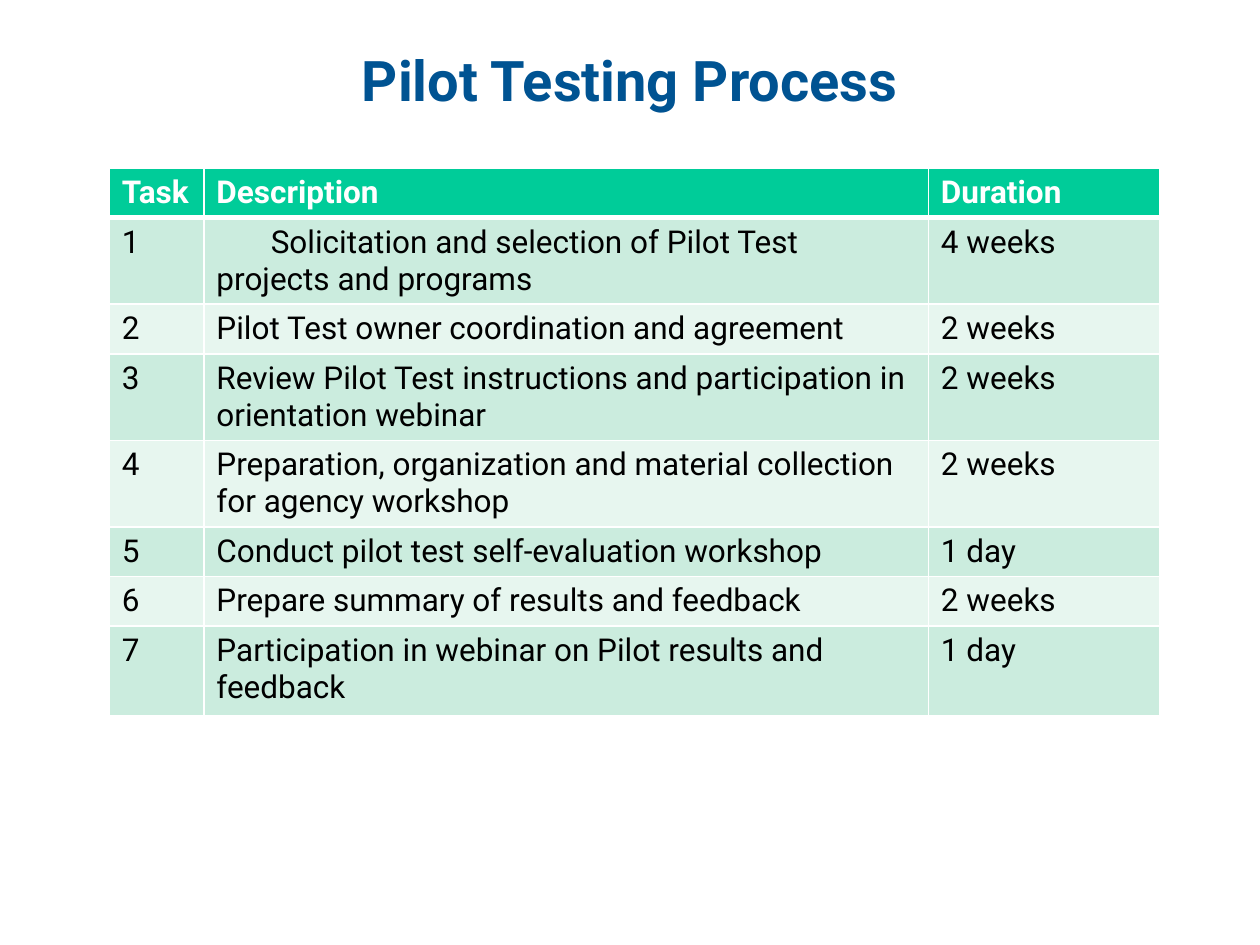
from dataclasses import dataclass

from lxml import etree
from pptx import Presentation
from pptx import util as u
from pptx.dml.color import RGBColor
from pptx.enum import text
from pptx.oxml.ns import qn


@dataclass(frozen=True)
class Theme:
    font: str = "Roboto"
    title: str = "005392"
    header: str = "00CC99"
    bands: tuple = ("CBECDE", "E7F6EF")
    white: str = "FFFFFF"
    black: str = "000000"
    title_size: int = 32
    body_size: int = 18


theme = Theme()


def add_run(para, words, size, color, bold):
    run = para.add_run()
    run.text = words
    run.font.name = theme.font
    run.font.size = u.Pt(size)
    run.font.bold = bold
    run.font.color.rgb = RGBColor.from_string(color)


def add_borders(cell, widths):
    properties = cell._tc.get_or_add_tcPr()
    for side, width in widths.items():
        line = etree.SubElement(properties, qn(f"a:ln{side}"), w=str(u.Pt(width)))
        fill = etree.SubElement(line, qn("a:solidFill"))
        etree.SubElement(fill, qn("a:srgbClr"), val=theme.white)


deck = Presentation()
deck.slide_width, deck.slide_height = u.Pt(720), u.Pt(540)
page = deck.slides.add_slide(deck.slide_layouts[5])

# Title
title = page.shapes.title
title.left, title.top = u.Pt(0), u.Pt(30)
title.width, title.height = u.Pt(720), u.Pt(90)
title.text_frame.vertical_anchor = text.MSO_ANCHOR.TOP
para = title.text_frame.paragraphs[0]
para.alignment = text.PP_ALIGN.CENTER
para.line_spacing = 0.8
add_run(para, "Pilot Testing Process", theme.title_size, theme.title, True)

# Table content
rows = [
    ("Task", "Description", "Duration"),
    ("1", "Solicitation and selection of Pilot Test projects and programs", "4 weeks"),
    ("2", "Pilot Test owner coordination and agreement", "2 weeks"),
    ("3", "Review Pilot Test instructions and participation in orientation webinar", "2 weeks"),
    ("4", "Preparation, organization and material collection for agency workshop", "2 weeks"),
    ("5", "Conduct pilot test self-evaluation workshop", "1 day"),
    ("6", "Prepare summary of results and feedback", "2 weeks"),
    ("7", "Participation in webinar on Pilot results and feedback", "1 day"),
]
column_widths = (54, 414, 132)
row_heights = (27, 48, 27, 48, 48, 27, 27, 51)

# Table grid
table = page.shapes.add_table(
    len(rows), len(column_widths), u.Pt(62.5), u.Pt(96),
    u.Pt(sum(column_widths)), u.Pt(sum(row_heights))).table
for column, width in zip(table.columns, column_widths):
    column.width = u.Pt(width)
for row, height in zip(table.rows, row_heights):
    row.height = u.Pt(height)

# Cells: header row, then alternating bands
for r, row in enumerate(rows):
    is_header = r == 0
    fill = theme.header if is_header else theme.bands[(r - 1) % 2]
    color = theme.white if is_header else theme.black
    for c, words in enumerate(row):
        cell = table.cell(r, c)
        add_borders(cell, {"L": 1, "R": 1, "T": 3 if r == 1 else 1, "B": 3 if is_header else 1})
        cell.fill.solid()
        cell.fill.fore_color.rgb = RGBColor.from_string(fill)
        add_run(cell.text_frame.paragraphs[0], words, theme.body_size, color, is_header)

# The first task starts with an indented line
first_task = table.cell(1, 1).text_frame.paragraphs[0]
first_task._p.get_or_add_pPr().set("indent", str(u.Pt(31)))

deck.save("out.pptx")
